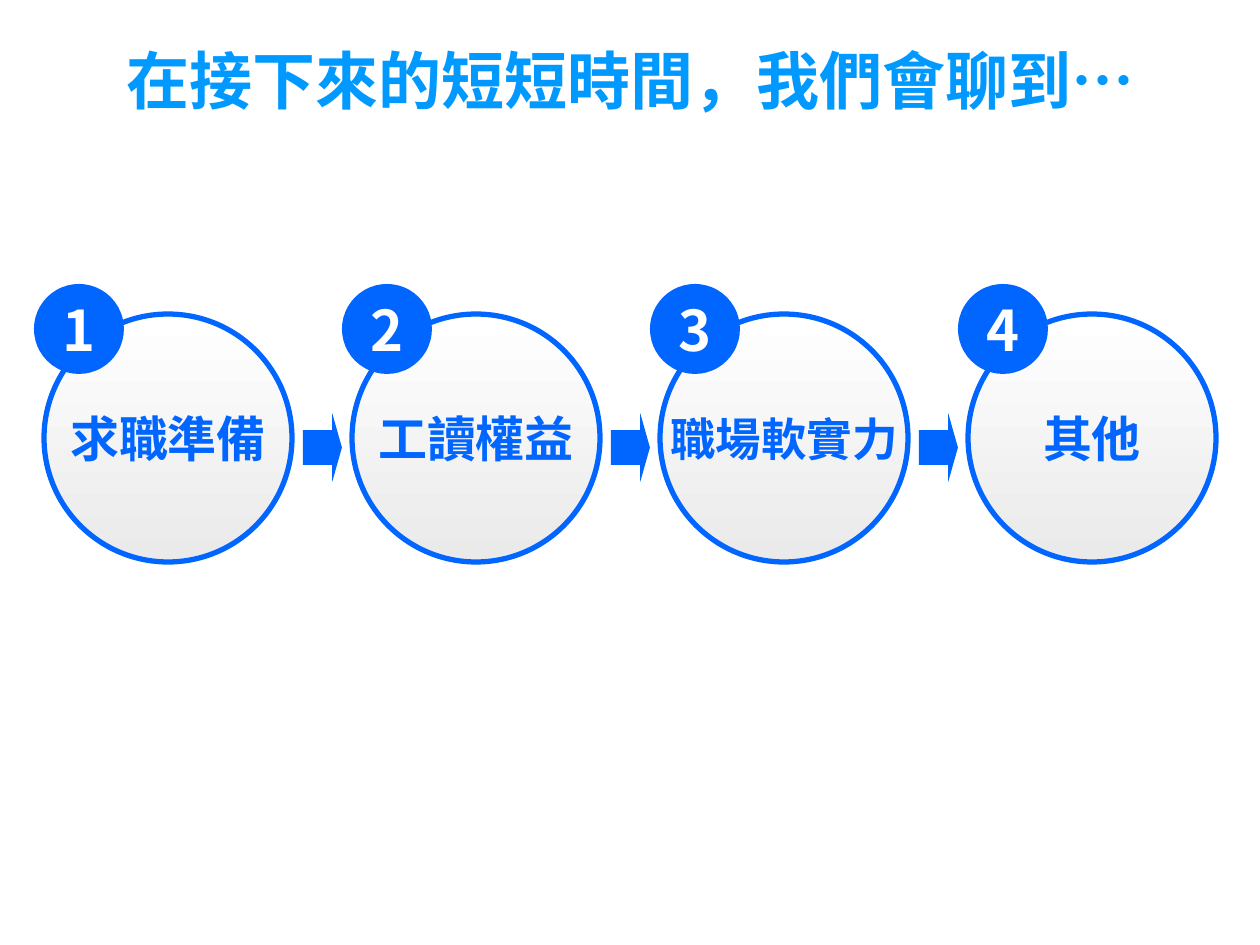
from lxml.etree import SubElement
from pptx import Presentation
from pptx.dml.color import RGBColor
from pptx.enum.shapes import MSO_SHAPE as Shape
from pptx.enum.text import MSO_ANCHOR as Anchor, PP_ALIGN as Align
from pptx.oxml.ns import qn
from pptx.util import Emu, Pt

EMU_PER_PX = 914400 / 126
TITLE_ONLY = 5
STEP_PITCH = 308
STEPS = [("求職準備", 28), ("工讀權益", 28), ("職場軟實力", 26), ("其他", 28)]


def px(length):
    return Emu(round(length * EMU_PER_PX))


def color(hex_string):
    return RGBColor.from_string(hex_string)


class SlideBuilder:
    BLUE = "0066FF"
    TITLE_BLUE = "0099FF"
    WHITE = "FFFFFF"
    GRAY = "EAEAEA"
    TITLE_FONT = "Noto Sans CJK JP"
    BODY_FONT = "Noto Sans CJK SC"

    def __init__(self, slide):
        self.slide = slide

    def set_text(self, shape, text, size, hex_string, font_name, wrap=False):
        frame = shape.text_frame
        frame.text = text
        frame.word_wrap = wrap
        frame.vertical_anchor = Anchor.MIDDLE
        paragraph = frame.paragraphs[0]
        paragraph.alignment = Align.CENTER
        font = paragraph.font
        font.size = Pt(size)
        font.bold = True
        font.color.rgb = color(hex_string)
        font.name = font_name
        # Chinese glyphs take the East Asian typeface
        properties = paragraph._p.pPr.find(qn("a:defRPr"))
        SubElement(properties, qn("a:ea"), typeface=font_name)

    def title(self, text, left, top, width, height):
        title = self.slide.shapes.title
        title.left, title.top = px(left), px(top)
        title.width, title.height = px(width), px(height)
        self.set_text(title, text, 36, self.TITLE_BLUE, self.TITLE_FONT, wrap=True)

    def solid_shape(self, kind, left, top, width, height):
        shape = self.slide.shapes.add_shape(
            kind, px(left), px(top), px(width), px(height))
        shape.shadow.inherit = False
        shape.fill.solid()
        shape.fill.fore_color.rgb = color(self.BLUE)
        shape.line.fill.background()
        return shape

    def topic_circle(self, text, size, left, top, diameter):
        circle = self.solid_shape(Shape.OVAL, left, top, diameter, diameter)
        circle.fill.gradient()
        circle.fill.gradient_angle = 270
        for stop, shade in zip(circle.fill.gradient_stops, (self.WHITE, self.GRAY)):
            stop.color.rgb = color(shade)
        circle.line.color.rgb = color(self.BLUE)
        circle.line.width = Pt(3)
        self.set_text(circle, text, size, self.BLUE, self.BODY_FONT)

    def arrow(self, left, top, width, height):
        arrow = self.solid_shape(Shape.RIGHT_ARROW, left, top, width, height)
        arrow.adjustments[0] = 0.5
        arrow.adjustments[1] = 0.25

    def number_badge(self, number, left, top, diameter):
        badge = self.solid_shape(Shape.OVAL, left, top, diameter, diameter)
        self.set_text(badge, str(number), 32, self.WHITE, self.BODY_FONT)


def main():
    presentation = Presentation()
    presentation.slide_width = px(1260)
    presentation.slide_height = px(945)
    layout = presentation.slide_layouts[TITLE_ONLY]
    builder = SlideBuilder(presentation.slides.add_slide(layout))

    builder.title("在接下來的短短時間，我們會聊到…", 63, 0, 1134, 158)
    for index, (topic, size) in enumerate(STEPS):
        offset = index * STEP_PITCH
        builder.topic_circle(topic, size, 44 + offset, 314, 248)
        if index < len(STEPS) - 1:
            builder.arrow(303 + offset, 413, 39, 69)
        builder.number_badge(index + 1, 34 + offset, 284, 90)

    presentation.save("out.pptx")


if __name__ == "__main__":
    main()
